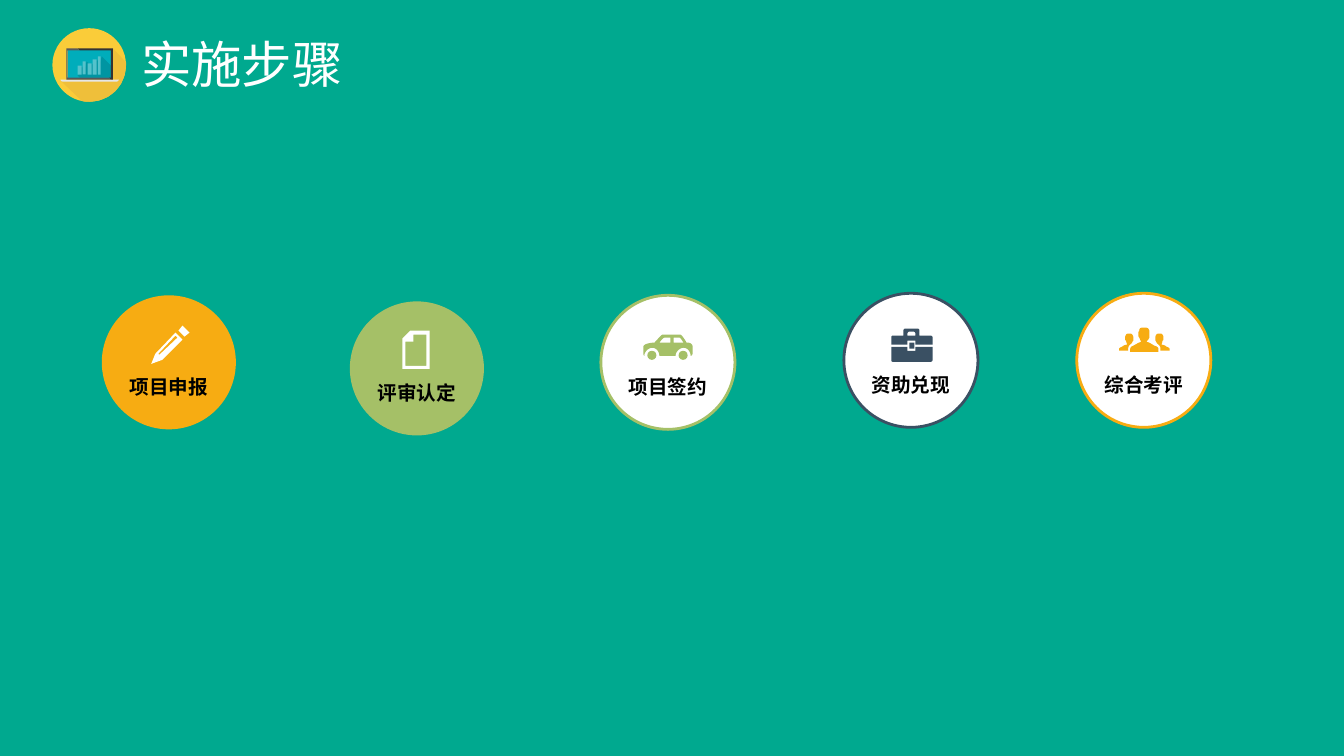
from dataclasses import dataclass

from lxml import etree
from pptx import Presentation
from pptx.dml.color import RGBColor
from pptx.enum.shapes import MSO_SHAPE
from pptx.enum.text import MSO_ANCHOR, PP_ALIGN
from pptx.oxml.ns import qn
from pptx.util import Inches, Pt

OVAL, RECT = MSO_SHAPE.OVAL, MSO_SHAPE.RECTANGLE
MIDDLE = MSO_ANCHOR.MIDDLE
LEFT, CENTER = PP_ALIGN.LEFT, PP_ALIGN.CENTER

FONT = "Noto Sans CJK SC"
TEAL, WHITE, BLACK = "00A98F", "FFFFFF", "000000"
ORANGE, GREEN, NAVY = "F7AC12", "A5C067", "3A5063"
CIRCLE = 1.33
CURVE_STEPS = 6

# Outlines are in hundredths of an inch: (x, y) is a line, six numbers a Bézier curve
Contour = list[tuple[float, ...]]


@dataclass
class Part:
    """A piece of an icon: an outline, or a preset in a box (x, y, width, height)."""
    contours: tuple[Contour, ...] = ()
    preset: MSO_SHAPE = RECT
    box: tuple[float, ...] = ()


@dataclass
class Step:
    label: str
    left: float
    top: float
    fill: str
    border: str | None
    icon_color: str
    icon: list[Part]


def rgb(color: str) -> RGBColor:
    return RGBColor.from_string(color)


def paint(shape, fill: str, border: str | None = None) -> None:
    shape.shadow.inherit = False
    shape.fill.solid()
    shape.fill.fore_color.rgb = rgb(fill)
    if border:
        shape.line.color.rgb = rgb(border)
        shape.line.width = Pt(2)
    else:
        shape.line.fill.background()


def flatten(contour: Contour) -> list[tuple[float, float]]:
    points = [contour[0]]
    for segment in contour[1:]:
        if len(segment) == 2:
            points.append(segment)
            continue
        x0, y0 = points[-1]
        x1, y1, x2, y2, x3, y3 = segment
        for step in range(1, CURVE_STEPS + 1):
            t = step / CURVE_STEPS
            a, b, c, d = (1 - t)**3, 3 * t * (1 - t)**2, 3 * t * t * (1 - t), t**3
            points.append((a * x0 + b * x1 + c * x2 + d * x3,
                           a * y0 + b * y1 + c * y2 + d * y3))
    return points


def add_preset(shapes, preset: MSO_SHAPE, left: float, top: float, width: float,
               height: float, fill: str, border: str | None = None) -> None:
    box = (Inches(n) for n in (left, top, width, height))
    paint(shapes.add_shape(preset, *box), fill, border)


def add_part(shapes, part: Part, color: str, left: float = 0, top: float = 0) -> None:
    if part.box:
        x, y, width, height = (n / 100 for n in part.box)
        add_preset(shapes, part.preset, left + x, top + y, width, height, color)
        return
    builder = None
    for contour in part.contours:
        first, *rest = [(Inches(left + x / 100), Inches(top + y / 100))
                        for x, y in flatten(contour)]
        if builder is None:
            builder = shapes.build_freeform(*first, scale=1.0)
        else:
            builder.move_to(*first)
        builder.add_line_segments(rest, close=True)
    paint(builder.convert_to_shape(), color)


def add_text(shapes, text: str, left: float, top: float, width: float, height: float, *,
             size: float, color: str, bold: bool = False, align: PP_ALIGN = LEFT,
             inset: float = 0, before: float = 0) -> None:
    box = shapes.add_textbox(Inches(left), Inches(top), Inches(width), Inches(height))
    frame = box.text_frame
    frame.word_wrap = True
    frame.vertical_anchor = MIDDLE
    frame.margin_left = frame.margin_right = Inches(inset)
    frame.margin_top = frame.margin_bottom = Inches(inset)
    paragraph = frame.paragraphs[0]
    paragraph.alignment = align
    paragraph.space_before = Pt(before)
    run = paragraph.add_run()
    run.text = text
    run.font.name, run.font.size, run.font.bold = FONT, Pt(size), bold
    run.font.color.rgb = rgb(color)
    etree.SubElement(run.font._element, qn("a:ea")).set("typeface", FONT)


def mirror(contour: Contour, axis: float) -> Contour:
    return [tuple(2 * axis - n if i % 2 == 0 else n for i, n in enumerate(segment))
            for segment in contour]


# Step icons, measured from the corner of their circle
PENCIL = [
    Part(([(73, 37), (53, 58), (49, 68), (60, 64), (80, 44)],
          [(57, 59), (56, 58), (73, 40), (75, 42)])),
    Part(([(76, 35), (80, 30), (87, 37), (82, 41)],)),
]
DOCUMENT = [
    Part(([(79, 29), (79, 67), (52, 67), (52, 37), (60, 29)],
          [(76, 33), (63, 33), (63, 40), (55, 40), (55, 64), (76, 64)])),
]
CAR = [
    Part(([(87, 47), (85, 47), (84, 45, 80, 39, 79, 39), (61, 39), (60, 39, 55, 45, 53, 47),
           (51, 47), (50, 47, 42, 48, 42, 51), (42, 57), (42, 58, 42, 59, 43, 60),
           (43, 56, 47, 52, 51, 52), (55, 52, 58, 56, 58, 60), (74, 60),
           (74, 56, 78, 52, 82, 52), (86, 52, 89, 56, 89, 60), (90, 60, 91, 59, 91, 57),
           (91, 51), (91, 49, 89, 47, 87, 47)],
          [(78, 42), (79, 42, 80, 44, 82, 47), (72, 47), (72, 42)],
          [(63, 42), (69, 42), (69, 47), (58, 47), (60, 44, 62, 42, 63, 42)])),
    *(Part(preset=OVAL, box=(x, 55, 9, 9)) for x in (46, 77)),
]
BRIEFCASE = [
    Part(([(71, 57), (63, 57), (63, 53), (47, 53), (47, 66), (47, 67, 47, 68, 49, 68),
           (86, 68), (87, 68, 88, 67, 88, 66), (88, 53), (71, 53)],)),
    Part(([(63, 51), (63, 47), (71, 47), (71, 51), (88, 51), (88, 44),
           (88, 43, 87, 42, 86, 42), (75, 42), (75, 37), (75, 36, 74, 35, 73, 35), (61, 35),
           (60, 35, 59, 36, 59, 37), (59, 42), (49, 42), (47, 42, 47, 43, 47, 44), (47, 51)],
          [(63, 40), (63, 39, 64, 38, 65, 38), (69, 38), (70, 38, 71, 39, 71, 40),
           (71, 42), (63, 42)])),
    Part(box=(65, 49, 5, 6)),
]
SIDE_PERSON = [
    (92, 55), (92, 55, 92, 54, 89, 53), (88, 52, 86, 51, 84, 51), (84, 50, 85, 49, 85, 47),
    (86, 47, 86, 46, 86, 45), (86, 43), (85, 40, 84, 40, 82, 40), (80, 40, 79, 40, 78, 43),
    (78, 47), (79, 48, 79, 49, 80, 50), (83, 52, 83, 54, 83, 55), (83, 57), (92, 57)]
FRONT_PERSON = [
    (77, 52), (75, 51, 73, 49, 69, 48), (70, 47, 71, 46, 72, 44), (72, 37),
    (71, 34, 69, 34, 67, 34), (64, 34, 62, 34, 62, 37), (61, 38, 61, 40, 61, 41),
    (61, 42, 61, 43, 62, 44), (63, 46, 63, 47, 64, 48), (61, 49, 58, 51, 56, 52),
    (53, 53, 53, 55, 53, 55), (53, 58), (81, 58), (81, 55), (81, 55, 81, 53, 77, 52)]
PEOPLE = [Part((person,)) for person in (SIDE_PERSON, mirror(SIDE_PERSON, 67), FRONT_PERSON)]

STEPS = [
    Step("项目申报", 1.01, 2.93, ORANGE, None, WHITE, PENCIL),
    Step("评审认定", 3.47, 2.99, GREEN, None, WHITE, DOCUMENT),
    Step("项目签约", 5.96, 2.93, WHITE, GREEN, GREEN, CAR),
    Step("资助兑现", 8.37, 2.91, WHITE, NAVY, NAVY, BRIEFCASE),
    Step("综合考评", 10.68, 2.91, WHITE, ORANGE, ORANGE, PEOPLE),
]

# Laptop badge, measured from the slide corner
BAR_COLOR = "55C2CB"
BARS = [(77, 65, 4), (82, 61, 3), (87, 63, 4), (92, 59, 4), (97, 56, 3)]
BADGE = [
    (Part(preset=OVAL, box=(52, 28, 73, 73)), "FACC39"),
    (Part(([(125, 62), (112, 48), (67, 76), (67, 80), (60, 80), (81, 100),
            (83, 101, 85, 101, 89, 101), (109, 101, 125, 85, 125, 65)],)), "EFBF3A"),
    (Part(box=(67, 49, 44, 29)), "00ADBB"),
    (Part(([(101, 56), (99, 63), (96, 59), (94, 66), (91, 63), (89, 64), (86, 61), (84, 69),
            (81, 66), (79, 73), (77, 75), (79, 77), (111, 77), (111, 66)],)), "0095A2"),
    *((Part(box=(x, y, width, 74 - y)), BAR_COLOR) for x, y, width in BARS),
    (Part(([(60, 79), (60, 80, 61, 81, 63, 81), (116, 81), (116, 81, 118, 80, 118, 79)],)),
     "E6E6E6"),
    (Part(([(112, 48), (77, 48), (79, 50), (110, 50), (110, 77), (108, 77), (110, 79),
            (112, 79)],)), "333333"),
    (Part(([(67, 77), (67, 50), (79, 50), (77, 48), (66, 48), (66, 79), (110, 79),
            (108, 77)],)), "58585A"),
]


def main() -> None:
    deck = Presentation()
    deck.slide_width, deck.slide_height = Inches(13.33), Inches(7.5)
    slide = deck.slides.add_slide(deck.slide_layouts[6])
    slide.background.fill.solid()
    slide.background.fill.fore_color.rgb = rgb(TEAL)

    # Heading
    add_text(slide.shapes, "实施步骤", 1.4, 0.36, 5.68, 0.54, size=36, color=WHITE)
    badge = slide.shapes.add_group_shape().shapes
    for part, color in BADGE:
        add_part(badge, part, color)

    # Steps
    for step in STEPS:
        group = slide.shapes.add_group_shape().shapes
        add_preset(group, OVAL, step.left, step.top, CIRCLE, CIRCLE, step.fill, step.border)
        add_text(group, step.label, step.left, step.top + 0.72, CIRCLE, 0.37, size=14,
                 color=BLACK, bold=True, align=CENTER, inset=0.07, before=2)
        for part in step.icon:
            add_part(group, part, step.icon_color, step.left, step.top)

    deck.save("out.pptx")


if __name__ == "__main__":
    main()
